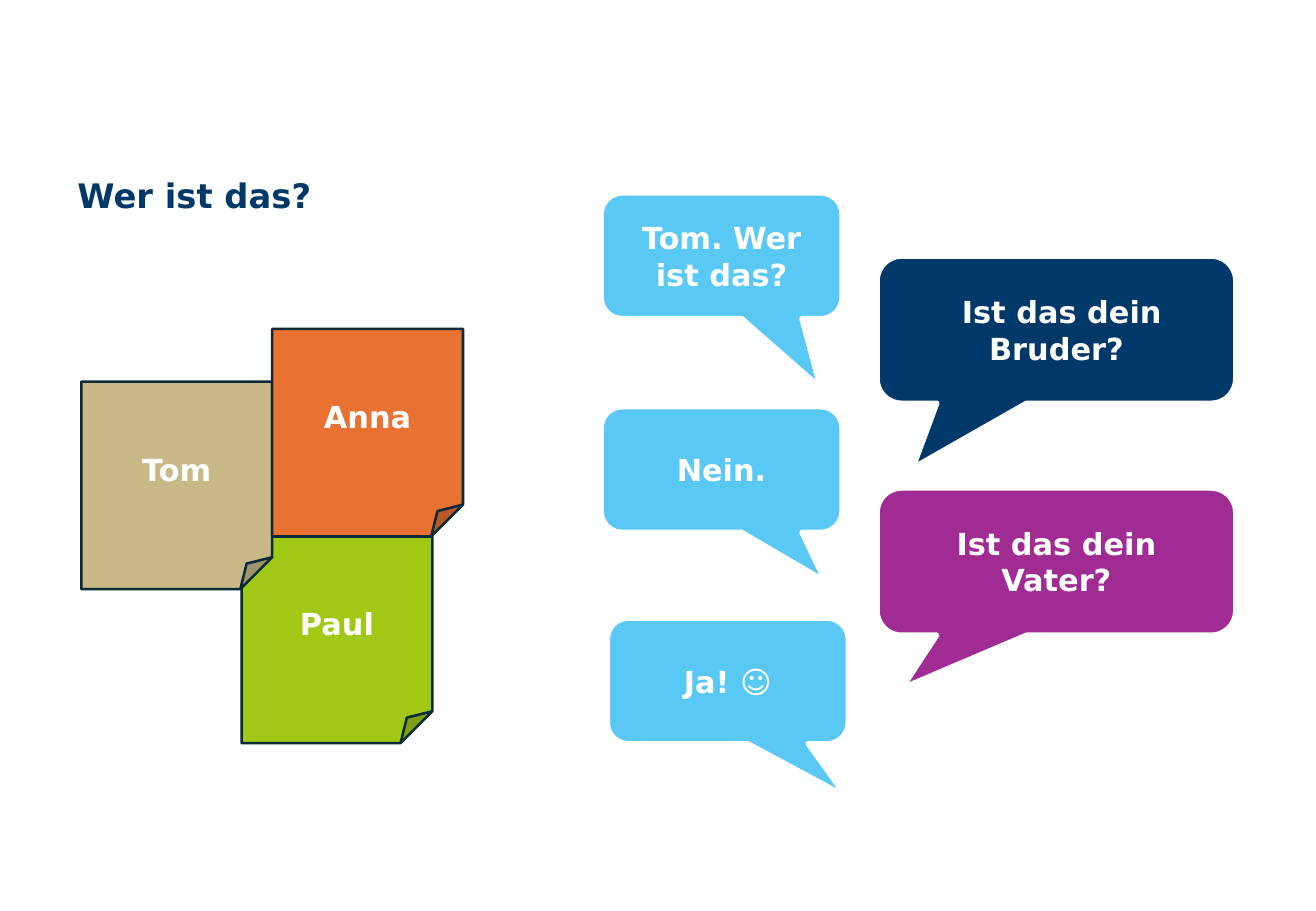
from pptx import Presentation
from pptx.dml.color import RGBColor
from pptx.enum.shapes import MSO_SHAPE
from pptx.enum.text import MSO_ANCHOR, MSO_AUTO_SIZE, PP_ALIGN
from pptx.util import Cm, Pt

NOTE = MSO_SHAPE.FOLDED_CORNER
BUBBLE = MSO_SHAPE.ROUNDED_RECTANGULAR_CALLOUT
MIDDLE = MSO_ANCHOR.MIDDLE
CENTER = PP_ALIGN.CENTER
GROW = MSO_AUTO_SIZE.SHAPE_TO_FIT_TEXT

FONT = "DejaVu Sans"
WHITE, NAVY, SKY, PURPLE = "FFFFFF", "003969", "5AC8F5", "A02B93"
GREEN, SAND, ORANGE, OUTLINE = "A0C814", "C8B987", "E97132", "092A39"

NOTE_SIZE = (3.99, 4.34)
ANSWER_SIZE = (5.03, 2.62)
QUESTION_SIZE = (7.49, 3.07)
ANSWER_LEFT, QUESTION_LEFT = 12.57, 18.34


def color(hex_value):
    return RGBColor.from_string(hex_value)


def add_words(paragraph, words, size, hex_value):
    run = paragraph.add_run()
    run.text = words
    run.font.name = FONT
    run.font.size = Pt(size)
    run.font.bold = True
    run.font.color.rgb = color(hex_value)


def add_title(slide, words):
    title = slide.shapes.add_textbox(Cm(1.37), Cm(3.53), Cm(17.45), Cm(1.12))
    title.text_frame.word_wrap = True
    title.text_frame.auto_size = GROW
    add_words(title.text_frame.paragraphs[0], words, 20, NAVY)


def add_panel(slide, preset, position, size, words, fill, line, line_width):
    panel = slide.shapes.add_shape(preset, *map(Cm, position + size))
    panel.shadow.inherit = False
    panel.fill.solid()
    panel.fill.fore_color.rgb = color(fill)
    panel.line.color.rgb = color(line)
    panel.line.width = Pt(line_width)
    panel.text_frame.word_wrap = True
    panel.text_frame.vertical_anchor = MIDDLE
    paragraph = panel.text_frame.paragraphs[0]
    paragraph.alignment = CENTER
    add_words(paragraph, words, 18, WHITE)
    return panel


def add_note(slide, name, left, top, fill):
    add_panel(slide, NOTE, (left, top), NOTE_SIZE, name, fill, OUTLINE, 1.5)


def add_bubble(slide, words, left, top, size, fill, tip_x, tip_y):
    bubble = add_panel(slide, BUBBLE, (left, top), size, words, fill, WHITE, 3)
    bubble.adjustments[0] = tip_x
    bubble.adjustments[1] = tip_y


def main():
    deck = Presentation()
    deck.slide_width, deck.slide_height = Cm(27.51), Cm(19.05)
    slide = deck.slides.add_slide(deck.slide_layouts[6])

    add_note(slide, "Paul", 5.05, 11.2, GREEN)
    add_title(slide, "Wer ist das?")
    add_note(slide, "Tom", 1.7, 7.98, SAND)
    add_note(slide, "Anna", 5.69, 6.88, ORANGE)

    for words, left, top, tip_x, tip_y in (
        ("Tom. Wer ist das?", ANSWER_LEFT, 4.04, 0.41, 1.05),
        ("Nein.", ANSWER_LEFT, 8.51, 0.43, 0.89),
        ("Ja! ☺", 12.7, 12.93, 0.49, 0.92),
    ):
        add_bubble(slide, words, left, top, ANSWER_SIZE, SKY, tip_x, tip_y)

    for words, top, fill, tip_x, tip_y in (
        (" Ist das dein Bruder?", 5.36, NAVY, -0.4, 0.94),
        ("Ist das dein Vater?", 10.21, PURPLE, -0.43, 0.86),
    ):
        add_bubble(slide, words, QUESTION_LEFT, top, QUESTION_SIZE, fill, tip_x, tip_y)

    deck.save("out.pptx")


if __name__ == "__main__":
    main()
